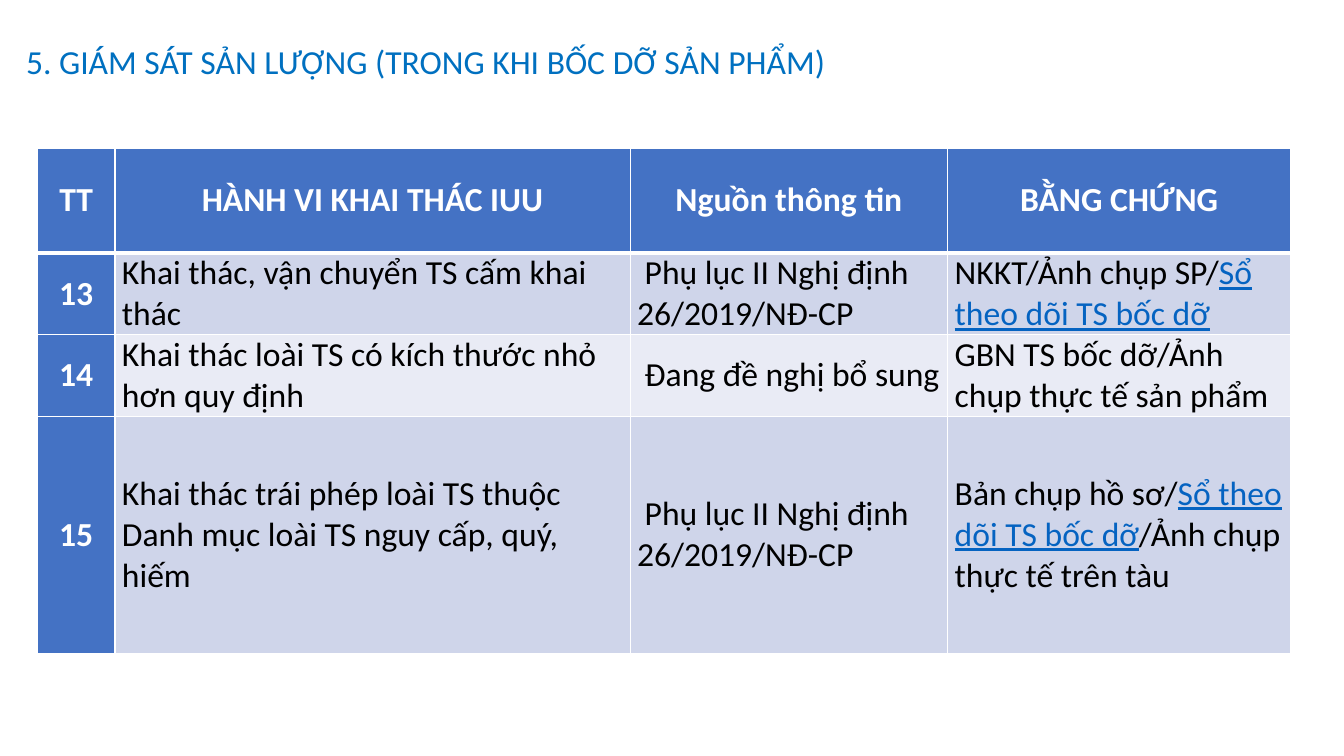
"""Build the slide on monitoring output while products are unloaded."""
from typing import NamedTuple

from lxml.etree import SubElement
from pptx import Presentation
from pptx.dml.color import RGBColor
from pptx.enum.text import MSO_ANCHOR as Anchor, PP_ALIGN as Align
from pptx.oxml.ns import qn
from pptx.util import Inches, Pt

FONT, FONT_SIZE = "Calibri", 24
WHITE, BLACK = "FFFFFF", "000000"
TITLE_BLUE, HEADER_BLUE, LINK_BLUE = "0070C0", "4472C4", "0563C1"
BANDS = ("CFD5EA", "E9EBF5")
COLUMN_WIDTHS = (0.77, 5.11, 3.15, 3.4)
ROW_HEIGHTS = (1.04, 0.81, 0.81, 2.35)
TITLE = "5. GIÁM SÁT SẢN LƯỢNG (TRONG KHI BỐC DỠ SẢN PHẨM)"
HEADERS = ("TT", "HÀNH VI KHAI THÁC IUU", "Nguồn thông tin", "BẰNG CHỨNG")
APPENDIX = " Phụ lục II Nghị định 26/2019/NĐ-CP"
LOGBOOK = "Sổ theo dõi TS bốc dỡ"


class Violation(NamedTuple):
    number: str
    behaviour: str
    source: str
    evidence: tuple[str, ...]


VIOLATIONS = (
    Violation("13", "Khai thác, vận chuyển TS cấm khai thác", APPENDIX,
              ("NKKT/Ảnh chụp SP/", LOGBOOK)),
    Violation("14", "Khai thác loài TS có kích thước nhỏ hơn quy định",
              " Đang đề nghị bổ sung",
              ("GBN TS bốc dỡ/Ảnh chụp thực tế sản phẩm",)),
    Violation("15", "Khai thác trái phép loài TS thuộc Danh mục loài TS nguy cấp, quý, hiếm",
              APPENDIX, ("Bản chụp hồ sơ/", LOGBOOK, "/Ảnh chụp thực tế trên tàu")),
)


def rgb(value: str) -> RGBColor:
    return RGBColor.from_string(value)


def style_paragraph(paragraph, color: str, space_before: float, bold: bool = False) -> None:
    paragraph.space_before = Pt(space_before)
    font = paragraph.font
    font.name, font.size, font.bold = FONT, Pt(FONT_SIZE), bold
    font.color.rgb = rgb(color)


def add_title(slide) -> None:
    box = slide.shapes.add_textbox(Inches(0.16), Inches(0.4), Inches(9.17), Inches(0.66))
    box.text_frame.word_wrap = True
    paragraph = box.text_frame.paragraphs[0]
    paragraph.text = TITLE
    paragraph.line_spacing = 0.9
    style_paragraph(paragraph, TITLE_BLUE, 10)


def set_borders(cell, row: int) -> None:
    properties = cell._tc.get_or_add_tcPr()
    widths = {"L": 1, "R": 1, "T": 3 if row == 1 else 1, "B": 3 if row == 0 else 1}
    for side, width in widths.items():
        line = SubElement(properties, qn(f"a:ln{side}"), w=str(Pt(width)))
        fill = SubElement(line, qn("a:solidFill"))
        SubElement(fill, qn("a:srgbClr"), val=WHITE)


def fill_cell(cell, texts: tuple[str, ...], row: int, column: int) -> None:
    is_heading = row == 0 or column == 0
    set_borders(cell, row)
    cell.fill.solid()
    cell.fill.fore_color.rgb = rgb(HEADER_BLUE if is_heading else BANDS[(row - 1) % 2])
    cell.vertical_anchor = Anchor.MIDDLE
    cell.margin_left = cell.margin_right = Inches(0.06 if row == 0 else 0.07)
    cell.margin_top = cell.margin_bottom = 0
    paragraph = cell.text_frame.paragraphs[0]
    paragraph.alignment = Align.CENTER if is_heading else Align.LEFT
    color = WHITE if is_heading else BLACK
    style_paragraph(paragraph, color, 6, bold=is_heading)
    for text in texts:
        is_link = text == LOGBOOK
        run = paragraph.add_run()
        run.text = text
        font = run.font
        font.name, font.size, font.bold = FONT, Pt(FONT_SIZE), is_heading
        font.underline = is_link
        font.color.rgb = rgb(LINK_BLUE if is_link else color)


def add_violation_table(slide) -> None:
    table = slide.shapes.add_table(
        len(ROW_HEIGHTS), len(COLUMN_WIDTHS), Inches(0.37), Inches(1.47),
        Inches(sum(COLUMN_WIDTHS)), Inches(sum(ROW_HEIGHTS))).table
    table.first_col = True
    for column, width in zip(table.columns, COLUMN_WIDTHS):
        column.width = Inches(width)
    for row, height in zip(table.rows, ROW_HEIGHTS):
        row.height = Inches(height)
    for row, contents in enumerate((HEADERS, *VIOLATIONS)):
        for column, content in enumerate(contents):
            texts = (content,) if isinstance(content, str) else content
            fill_cell(table.cell(row, column), texts, row, column)


def main() -> None:
    presentation = Presentation()
    presentation.slide_width, presentation.slide_height = Inches(13.33), Inches(7.5)
    slide = presentation.slides.add_slide(presentation.slide_layouts[6])
    add_title(slide)
    add_violation_table(slide)
    presentation.save("out.pptx")


if __name__ == "__main__":
    main()
